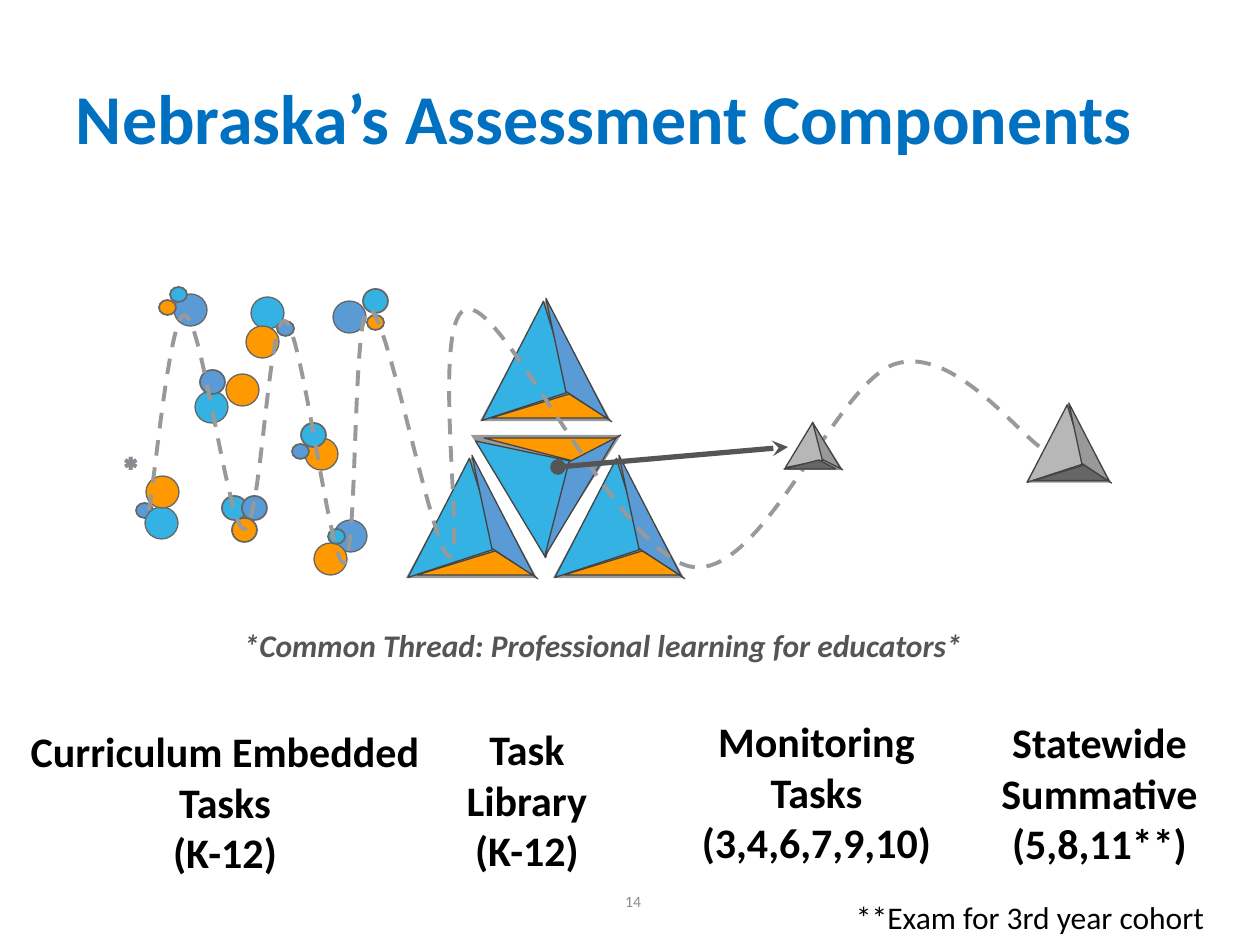
import pptx
import pptx.util
from pptx.dml.color import RGBColor
from pptx.enum.dml import MSO_LINE
from pptx.enum.shapes import MSO_CONNECTOR, MSO_SHAPE
from pptx.enum.text import MSO_ANCHOR, PP_ALIGN
from pptx.oxml.ns import qn
from lxml import etree

EMU_PER_PX = 914400 / 126


class Theme:
    font = "Calibri"
    star_font = "TeX Gyre Adventor"
    title, black, note, number, star = "0070C0", "000000", "555555", "8C8C8C", "8A8992"
    blue, cyan, orange = "5B9BD5", "34B2E3", "FF9900"
    shade, light, dark = "999999", "B7B7B7", "666666"
    edge, ring, thread, arrow = "434343", "666666", "999999", "555555"
    title_size, label_size, note_size, number_size = 40, 24, 18, 9


# box, lines, size, colour, bold, italic, alignment, anchor, (side, top) inset, font
CENTER, LEFT, RIGHT = PP_ALIGN.CENTER, PP_ALIGN.LEFT, PP_ALIGN.RIGHT
TOP, MIDDLE = MSO_ANCHOR.TOP, MSO_ANCHOR.MIDDLE
TEXTS = [
    ((370, 876, 284, 50), ["14"], Theme.number_size, Theme.number,
     False, False, RIGHT, MIDDLE, (13, 6), Theme.font),
    ((63, 38, 1134, 158), ["Nebraska’s Assessment Components"], Theme.title_size, Theme.title,
     True, False, LEFT, MIDDLE, (13, 6), Theme.font),
    ((164, 621, 878, 96), ["*Common Thread: Professional learning for educators*"],
     Theme.note_size, Theme.note, True, True, CENTER, TOP, (9, 5), Theme.font),
    ((102, 436, 59, 58), ["*"], Theme.note_size, Theme.star,
     True, False, CENTER, TOP, (13, 13), Theme.star_font),
    ((843, 885, 391, 42), ["**Exam for 3rd year cohort"], Theme.note_size, Theme.black,
     False, False, LEFT, TOP, (13, 13), Theme.font),
]
LABELS = [
    ((15, 721, 420, 226), ["Curriculum Embedded", "Tasks", "(K-12)"]),
    ((387, 719, 280, 164), ["Task", "Library", "(K-12)"]),
    ((656, 711, 321, 226), ["Monitoring", "Tasks", "(3,4,6,7,9,10)"]),
    ((989, 712, 221, 164), ["Statewide Summative (5,8,11**)"]),
]

# size name: width, height, outline in points
CIRCLE_SIZES = {"large": (33, 32, 0.75), "medium": (25, 24, 1), "small": (17, 15, 1)}
CIRCLES = [
    ("large", Theme.blue, 334, 520), ("large", Theme.orange, 314, 543),
    ("large", Theme.blue, 174, 294), ("large", Theme.orange, 305, 438),
    ("small", Theme.blue, 292, 444), ("medium", Theme.cyan, 301, 423),
    ("medium", Theme.cyan, 363, 289), ("large", Theme.cyan, 251, 297),
    ("large", Theme.orange, 246, 326), ("large", Theme.blue, 333, 301),
    ("small", Theme.orange, 159, 300), ("small", Theme.blue, 277, 321),
    ("small", Theme.cyan, 170, 287), ("small", Theme.orange, 367, 315),
    ("small", Theme.blue, 136, 503), ("large", Theme.cyan, 145, 507),
    ("large", Theme.orange, 146, 476), ("medium", Theme.cyan, 222, 496),
    ("medium", Theme.blue, 242, 496), ("medium", Theme.orange, 232, 518),
    ("large", Theme.orange, 226, 374), ("large", Theme.cyan, 195, 391),
    ("medium", Theme.blue, 200, 370), ("small", Theme.cyan, 328, 529),
]

# Faces, back to front: box from the pyramid's corner, rotation, flipped, apex.
# The ridge is the edge line drawn above the first two faces.
UPRIGHT = {
    "faces": [((0, 0, 131, 121), 0, False, 0.5), ((-5, 43, 134, 66), 117.3, False, 0.5),
              ((11, 94, 116, 24), 0, False, 0.675), ((18, 52, 136, 25), 242.7, True, 0.675)],
    "ridge": (91, 91, 132, 122),
}
INVERTED = {
    "faces": [((0, 0, 150, 118), 180, True, 0.5), ((3, 9, 136, 73), 59, True, 0.5),
              ((13, 3, 132, 23), 180, True, 0.675), ((28, 41, 139, 28), 301, False, 0.675)],
    "ridge": (101, 26, 150, 0),
}
FLAT = {
    "faces": [((0, 0, 59, 47), 0, False, 0.5), ((1, 15, 53, 29), 121.2, False, 0.5),
              ((0, 37, 52, 9), 0, False, 0.675), ((11, 20, 54, 11), 238.7, True, 0.675)],
    "ridge": (42, 35, 59, 47),
}
COLOURED = (Theme.shade, Theme.cyan, Theme.orange, Theme.blue)
GREY = (Theme.shade, Theme.light, Theme.dark, Theme.shade)
PYRAMIDS = [
    (INVERTED, 471, 435, 1, COLOURED), (UPRIGHT, 406, 457, 1, COLOURED),
    (UPRIGHT, 553, 457, 1, COLOURED), (UPRIGHT, 480, 300, 1, COLOURED),
    (UPRIGHT, 1026, 404, 0.65, GREY),
]
MONITORING_PYRAMID = (FLAT, 784, 423, 1, GREY)
MONITORING_ARROW = (558, 467, 788, 447)

# Start point, then two control points and an end point for each bend
THREAD = [
    (149, 510),
    (155, 478), (170, 311), (185, 315), (202, 318), (228, 528), (244, 529),
    (261, 530), (268, 315), (285, 321), (302, 326), (330, 566), (344, 563),
    (358, 562), (352, 310), (369, 309), (387, 307), (433, 557), (450, 557),
    (466, 557), (428, 307), (469, 309), (509, 310), (621, 557), (693, 567),
    (764, 576), (835, 384), (895, 364), (953, 345), (1019, 435), (1043, 449),
]


def px(value):
    return pptx.util.Emu(round(value * EMU_PER_PX))


def add_text(slide, box, lines, size, colour, bold, italic, alignment, anchor, inset, font):
    frame = slide.shapes.add_textbox(*map(px, box)).text_frame
    frame.word_wrap = True
    frame.vertical_anchor = anchor
    frame.margin_left = frame.margin_right = px(inset[0])
    frame.margin_top = frame.margin_bottom = px(inset[1])
    frame.text = "\n".join(lines)
    for paragraph in frame.paragraphs:
        paragraph.alignment = alignment
        for run in paragraph.runs:
            run.font.name, run.font.size = font, pptx.util.Pt(size)
            run.font.bold, run.font.italic = bold, italic
            run.font.color.rgb = RGBColor.from_string(colour)


def set_line(line, colour, width):
    line.color.rgb = RGBColor.from_string(colour)
    line.width = pptx.util.Pt(width)


def add_filled(slide, preset, box, fill):
    shape = slide.shapes.add_shape(preset, *map(px, box))
    shape.shadow.inherit = False
    shape.fill.solid()
    shape.fill.fore_color.rgb = RGBColor.from_string(fill)
    return shape


def add_straight(slide, ends, colour, width, head=None, tail=None):
    connector = slide.shapes.add_connector(MSO_CONNECTOR.STRAIGHT, *map(px, ends))
    set_line(connector.line, colour, width)
    for tag, kind in (("a:headEnd", head), ("a:tailEnd", tail)):
        if kind:
            etree.SubElement(connector.line._get_or_add_ln(), qn(tag), type=kind)
    etree.SubElement(connector.element.spPr, qn("a:effectLst"))


def add_pyramid(slide, form, left, top, scale, colours):
    def place(x, y):
        return left + x * scale, top + y * scale

    for index, ((x, y, width, height), rotation, flipped, apex) in enumerate(form["faces"]):
        if index == 2:
            x1, y1, x2, y2 = form["ridge"]
            add_straight(slide, (*place(x1, y1), *place(x2, y2)), Theme.edge, 0.75)
        box = (*place(x, y), width * scale, height * scale)
        face = add_filled(slide, MSO_SHAPE.ISOSCELES_TRIANGLE, box, colours[index])
        face.adjustments[0] = apex
        face.rotation = rotation
        if flipped:
            face.element.spPr.xfrm.set("flipH", "1")
        if index == 0:
            face.line.fill.background()
        else:
            set_line(face.line, Theme.edge, 0.75)


def add_thread(slide):
    """Draw the dashed curve, turning each three line segments into one Bézier."""
    builder = slide.shapes.build_freeform(*THREAD[0], scale=EMU_PER_PX)
    builder.add_line_segments(THREAD[1:], close=False)
    shape = builder.convert_to_shape()
    shape.shadow.inherit = False
    shape.fill.background()
    set_line(shape.line, Theme.thread, 2.25)
    shape.line.dash_style = MSO_LINE.DASH
    outline = next(shape.element.iter(qn("a:path")))
    segments = outline.findall(qn("a:lnTo"))
    for start in range(0, len(segments), 3):
        bend = etree.SubElement(outline, qn("a:cubicBezTo"))
        for segment in segments[start:start + 3]:
            bend.append(segment[0])
            outline.remove(segment)


def main():
    presentation = pptx.Presentation()
    presentation.slide_width, presentation.slide_height = px(1260), px(945)
    slide = presentation.slides.add_slide(presentation.slide_layouts[6])
    for text in TEXTS:
        add_text(slide, *text)
    for box, lines in LABELS:
        add_text(slide, box, lines, Theme.label_size, Theme.black,
                 True, False, CENTER, TOP, (9, 5), Theme.font)
    for size, colour, left, top in CIRCLES:
        width, height, outline = CIRCLE_SIZES[size]
        circle = add_filled(slide, MSO_SHAPE.OVAL, (left, top, width, height), colour)
        set_line(circle.line, Theme.ring, outline)
    for pyramid in PYRAMIDS:
        add_pyramid(slide, *pyramid)
    add_thread(slide)
    add_pyramid(slide, *MONITORING_PYRAMID)
    add_straight(slide, MONITORING_ARROW, Theme.arrow, 3, head="oval", tail="stealth")
    presentation.save("out.pptx")


if __name__ == "__main__":
    main()
